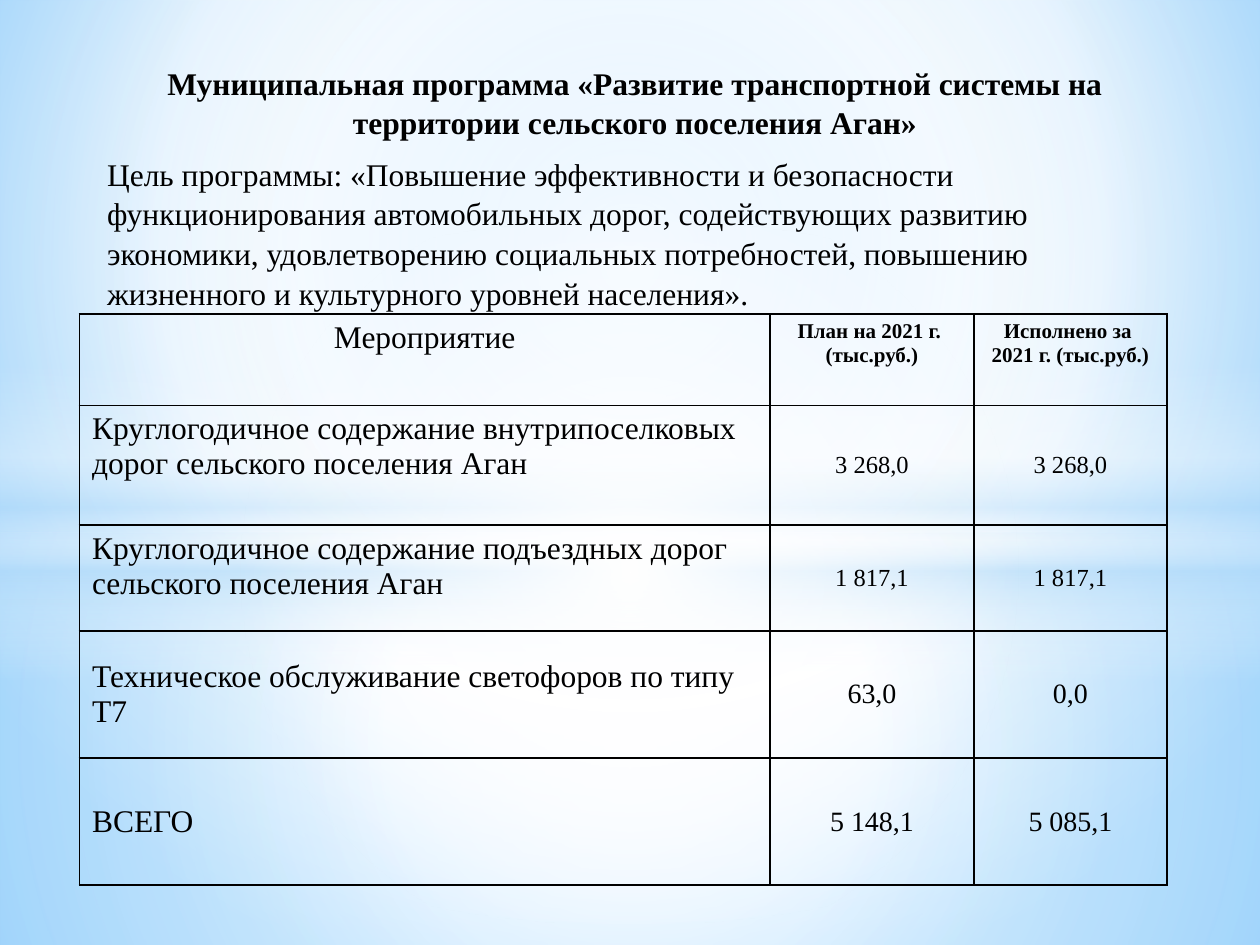
from collections import namedtuple

from lxml.etree import SubElement
from pptx import Presentation
from pptx.dml.color import RGBColor
from pptx.enum.shapes import MSO_SHAPE as Shape
from pptx.enum.text import MSO_ANCHOR as Anchor, MSO_AUTO_SIZE as AutoSize, PP_ALIGN as Align
from pptx.oxml import parse_xml
from pptx.oxml.ns import nsdecls, qn
from pptx.util import Pt

Box = namedtuple("Box", "left top width height")
Row = namedtuple("Row", "height label_anchor value_size texts")


class Theme:
    font = "Times New Roman"
    ink = "000000"
    sky, deep_sky, pale, white = "9ED5FF", "5BB9FF", "B4DCFA", "FFFFFF"
    body, header, value, large_value = 18, 12, 14, 16
    border = 1


CENTER = (50, 50, 50, 50)
TITLE = "Муниципальная программа «Развитие транспортной системы на территории сельского поселения Аган»"
GOAL = ("Цель программы: «Повышение эффективности и безопасности функционирования "
        "автомобильных дорог, содействующих развитию экономики, удовлетворению социальных "
        "потребностей, повышению жизненного и культурного уровней населения».")
COLUMNS = (394.6, 116.6, 110.2)
ROWS = (
    Row(52.4, Anchor.TOP, Theme.header,
        ("Мероприятие", "План на 2021 г. \n(тыс.руб.)", "Исполнено за \n2021 г. (тыс.руб.)")),
    Row(68.4, Anchor.TOP, Theme.value,
        ("Круглогодичное содержание внутрипоселковых дорог сельского поселения Аган",
         "3 268,0", "3 268,0")),
    Row(60.5, Anchor.TOP, Theme.value,
        ("Круглогодичное содержание подъездных дорог сельского поселения Аган",
         "1 817,1", "1 817,1")),
    Row(72.6, Anchor.MIDDLE, Theme.large_value,
        ("Техническое обслуживание светофоров по типу Т7", "63,0", "0,0")),
    Row(72.6, Anchor.MIDDLE, Theme.large_value, ("ВСЕГО", "5 148,1", "5 085,1")),
)


def set_gradient(fill, host, stops, focus=None):
    """Fill with (position, colour, opacity) stops, round a focus or downwards."""
    fill.solid()
    gradient = parse_xml(f'<a:gradFill {nsdecls("a")} rotWithShape="1"><a:gsLst/></a:gradFill>')
    for position, color, opacity in stops:
        stop = SubElement(gradient[0], qn("a:gs"), pos=str(position * 1000))
        tint = SubElement(stop, qn("a:srgbClr"), val=color)
        if opacity < 100:
            SubElement(tint, qn("a:alpha"), val=str(opacity * 1000))
    if focus:
        circle = SubElement(gradient, qn("a:path"), {"path": "circle"})
        edges = {side: str(share * 1000) for side, share in zip("ltrb", focus)}
        SubElement(circle, qn("a:fillToRect"), edges)
    else:
        SubElement(gradient, qn("a:lin"), ang="5400000", scaled="0")
    solid = host.xpath(".//a:solidFill")[0]
    solid.getparent().replace(solid, gradient)


def style_paragraph(para, size, align, bold=False):
    para.alignment = align
    para.font.name = Theme.font
    para.font.size = Pt(size)
    para.font.bold = bold
    para.font.color.rgb = RGBColor.from_string(Theme.ink)


def add_backdrop(page, box):
    """Sky gradient with layered translucent glows."""
    set_gradient(page.background.fill, page.element,
                 ((0, Theme.sky, 100), (60, Theme.white, 100), (100, Theme.deep_sky, 100)),
                 (20, 10, 20, 60))
    white, pale = Theme.white, Theme.pale
    layers = (
        (Shape.RECTANGLE, 304.6, 235.4, CENTER, ((0, white, 91), (37, white, 76), (100, pale, 79))),
        (Shape.RECTANGLE, 0, 304.6, CENTER, ((0, white, 89), (48, white, 62), (100, pale, 79))),
        (Shape.RECTANGLE, 208.8, 180, None,
         ((0, white, 0), (29, white, 30), (45, pale, 40),
          (55, white, 26), (65, pale, 60), (100, white, 0))),
        (Shape.OVAL, 126, 401.8, CENTER, ((0, white, 100), (54, white, 0))),
    )
    for kind, top, height, focus, stops in layers:
        glow = page.shapes.add_shape(kind, Pt(box.left), Pt(box.top + top),
                                     Pt(box.width), Pt(height))
        glow.shadow.inherit = False
        set_gradient(glow.fill, glow.element.spPr, stops, focus)
        glow.line.fill.background()


def add_summary(page, box):
    """Programme name and goal in the subtitle placeholder."""
    summary = page.placeholders[1]
    summary.left, summary.top, summary.width, summary.height = map(Pt, box)
    page.shapes.element.append(summary.element)  # in front of the backdrop
    frame = summary.text_frame
    frame.text = f"{TITLE}\n{GOAL}"
    frame.auto_size = AutoSize.NONE
    frame.vertical_anchor = Anchor.TOP
    for para, align, bold in zip(frame.paragraphs, (Align.CENTER, Align.LEFT), (True, False)):
        style_paragraph(para, Theme.body, align, bold)
        para.space_before, para.space_after = Pt(3.6), Pt(3)
        para.line_spacing = 1.05


def add_borders(cell):
    properties = cell._tc.get_or_add_tcPr()
    for index, side in enumerate("LRTB"):
        properties.insert(index, parse_xml(
            f'<a:ln{side} {nsdecls("a")} w="{Pt(Theme.border)}"><a:solidFill>'
            f'<a:srgbClr val="{Theme.ink}"/></a:solidFill></a:ln{side}>'))


def add_budget_table(page, box):
    """Measures with planned and spent sums."""
    table = page.shapes.add_table(len(ROWS), len(COLUMNS), *map(Pt, box)).table
    table.first_row = table.horz_banding = False
    for column, width in zip(table.columns, COLUMNS):
        column.width = Pt(width)
    for y, row in enumerate(ROWS):
        table.rows[y].height = Pt(row.height)
        is_header = y == 0
        for x, text in enumerate(row.texts):
            is_label = x == 0
            cell = table.cell(y, x)
            cell.text = text
            cell.fill.background()
            add_borders(cell)
            cell.vertical_anchor = row.label_anchor if is_label or is_header else Anchor.MIDDLE
            size = Theme.body if is_label else row.value_size
            align = Align.LEFT if is_label and not is_header else Align.CENTER
            for para in cell.text_frame.paragraphs:
                style_paragraph(para, size, align, is_header and not is_label)


def main():
    deck = Presentation()
    deck.slide_width, deck.slide_height = Pt(720), Pt(540)
    page = deck.slides.add_slide(deck.slide_layouts[0])
    title = page.shapes.title.element
    title.getparent().remove(title)
    add_backdrop(page, Box(0, 0, 720, 540))
    add_summary(page, Box(54, 31.7, 617.8, 481.7))
    add_budget_table(page, Box(45.4, 179.3, sum(COLUMNS), sum(row.height for row in ROWS)))
    deck.save("out.pptx")


if __name__ == "__main__":
    main()
